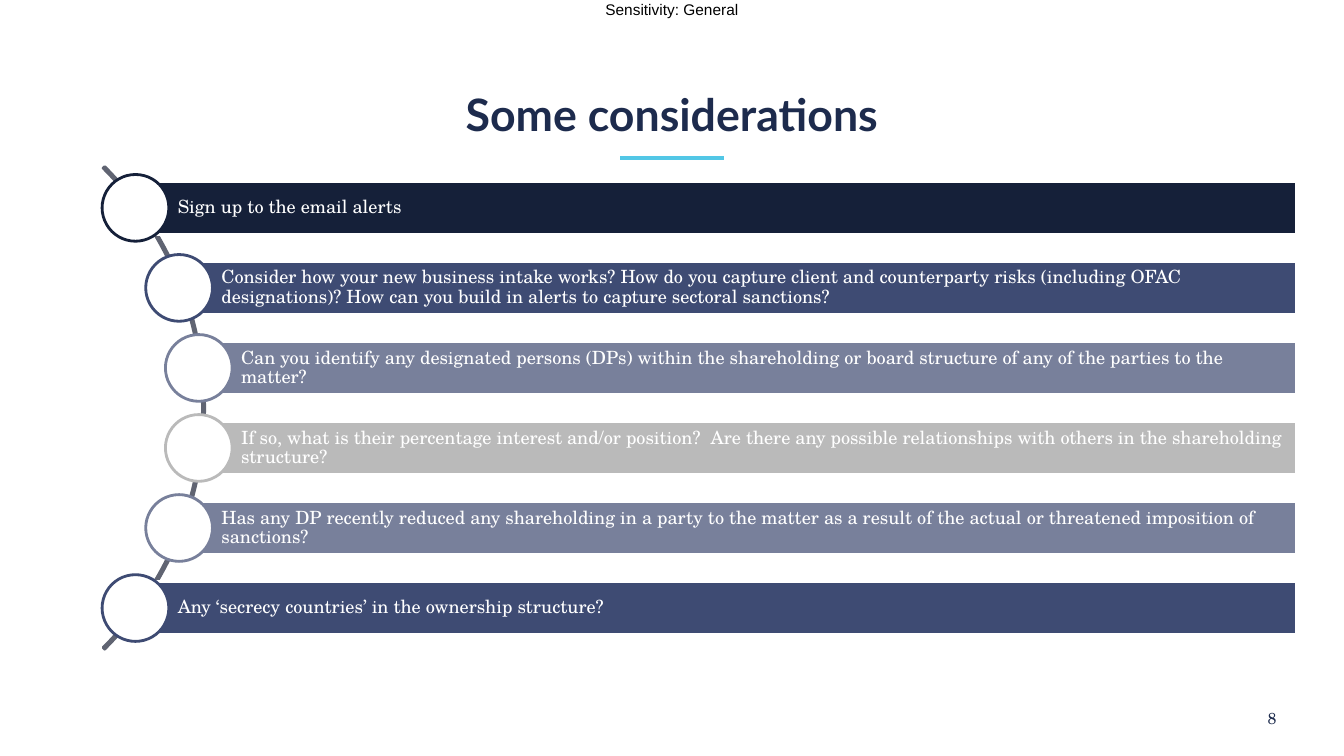
import math
from dataclasses import dataclass

from lxml import etree
from pptx import Presentation
from pptx.dml.color import RGBColor
from pptx.enum.shapes import MSO_CONNECTOR, MSO_SHAPE
from pptx.enum.text import MSO_ANCHOR, PP_ALIGN
from pptx.oxml.ns import qn
from pptx.util import Inches, Pt

LEFT, CENTER, RIGHT = PP_ALIGN.LEFT, PP_ALIGN.CENTER, PP_ALIGN.RIGHT
TOP, MIDDLE, BOTTOM = MSO_ANCHOR.TOP, MSO_ANCHOR.MIDDLE, MSO_ANCHOR.BOTTOM
BAR, CIRCLE, ARC = MSO_SHAPE.RECTANGLE, MSO_SHAPE.OVAL, MSO_SHAPE.BLOCK_ARC
STRAIGHT = MSO_CONNECTOR.STRAIGHT
SLIDE_W, SLIDE_H = 13.33, 7.5


@dataclass(frozen=True)
class Theme:
    navy: str = "1D2B4D"
    midnight: str = "152039"
    indigo: str = "3E4B73"
    slate: str = "78809B"
    silver: str = "BABABA"
    graphite: str = "606472"
    accent: str = "52C7E6"
    white: str = "FFFFFF"
    black: str = "000000"
    heading_font: str = "Lato"
    body_font: str = "TeX Gyre Schola"
    label_font: str = "Arial"
    title_size: float = 31.9
    body_size: float = 13
    number_size: float = 11.4
    label_size: float = 11
    line_width: float = 2
    rule_width: float = 2.5


THEME = Theme()

CONSIDERATIONS = [
    ("Sign up to the email alerts", THEME.midnight),
    ("Consider how your new business intake works? How do you capture client "
     "and counterparty risks (including OFAC designations)? How can you build "
     "in alerts to capture sectoral sanctions?", THEME.indigo),
    ("Can you identify any designated persons (DPs) within the shareholding or "
     "board structure of any of the parties to the matter?", THEME.slate),
    ("If so, what is their percentage interest and/or position?  Are there any "
     "possible relationships with others in the shareholding structure?",
     THEME.silver),
    ("Has any DP recently reduced any shareholding in a party to the matter as "
     "a result of the actual or threatened imposition of sanctions?",
     THEME.slate),
    ("Any ‘secrecy countries’ in the ownership structure?", THEME.indigo),
]


def rgb(value):
    return RGBColor.from_string(value)


def write(holder, text, *, size, color, font=THEME.body_font, bold=False,
          align=LEFT, anchor=MIDDLE, insets=(0, 0, 0, 0), spacing=1.0, wrap=True):
    frame = holder.text_frame
    frame.word_wrap = wrap
    frame.vertical_anchor = anchor
    (frame.margin_left, frame.margin_top,
     frame.margin_right, frame.margin_bottom) = map(Inches, insets)
    paragraph = frame.paragraphs[0]
    paragraph.alignment = align
    paragraph.line_spacing = spacing
    run = paragraph.add_run()
    run.text = text
    run.font.name = font
    run.font.size = Pt(size)
    run.font.bold = bold
    run.font.color.rgb = rgb(color)


def add_outlined(slide, kind, box, line, fill=None):
    shape = slide.shapes.add_shape(kind, *map(Inches, box))
    shape.shadow.inherit = False
    if fill:
        shape.fill.solid()
        shape.fill.fore_color.rgb = rgb(fill)
    else:
        shape.fill.background()
    shape.line.color.rgb = rgb(line)
    shape.line.width = Pt(THEME.line_width)
    return shape


def add_label(slide, box, text, **style):
    write(slide.shapes.add_textbox(*map(Inches, box)), text, **style)


def build_heading(slide, box, text):
    left, top, width, height = box
    title = slide.shapes.title
    title.left, title.top, title.width, title.height = map(Inches, box)
    write(title, text, size=THEME.title_size, color=THEME.navy, bold=True,
          font=THEME.heading_font, align=CENTER, anchor=BOTTOM)

    # Short rule centred under the title
    middle, rule_y, half = left + width / 2, top + height + 0.18, 0.515
    rule = slide.shapes.add_connector(
        STRAIGHT, *map(Inches, (middle - half, rule_y, middle + half, rule_y)))
    rule.line.color.rgb = rgb(THEME.accent)
    rule.line.width = Pt(THEME.rule_width)
    etree.SubElement(rule._element.spPr, qn("a:effectLst"))


def build_curved_list(slide, box, items):
    left, top, width, height = box
    pitch = height / len(items)
    bar_height, circle_size = pitch * 2 / 3, pitch * 5 / 6
    middle = top + height / 2

    # Arc that the circles follow
    diameter = 6.77
    arc_left = left - 5.75
    arc_center = arc_left + diameter / 2
    arc = add_outlined(slide, ARC, (arc_left, middle - diameter / 2,
                                    diameter, diameter), THEME.graphite)
    for index, value in enumerate((189, 27, 0.0032)):
        arc.adjustments[index] = value
    track_radius = 3.35

    # One bar and one circle per consideration
    for row, (text, color) in enumerate(items):
        y = top + pitch * (row + 0.5)
        x = arc_center + math.sqrt(track_radius ** 2 - (y - middle) ** 2)
        bar = add_outlined(slide, BAR, (x, y - bar_height / 2,
                                        left + width - x, bar_height),
                           THEME.white, color)
        write(bar, text, size=THEME.body_size, color=THEME.white,
              insets=(0.42, 0.04, 0.04, 0.04), spacing=0.9)
        add_outlined(slide, CIRCLE, (x - circle_size / 2, y - circle_size / 2,
                                     circle_size, circle_size),
                     color, THEME.white)


def main():
    deck = Presentation()
    deck.slide_width, deck.slide_height = Inches(SLIDE_W), Inches(SLIDE_H)
    slide = deck.slides.add_slide(deck.slide_layouts[5])

    # Sensitivity marking at the top edge
    add_label(slide, (SLIDE_W / 2 - 0.68, 0, 1.36, 0.18), "Sensitivity: General",
              size=THEME.label_size, color=THEME.black, font=THEME.label_font,
              align=CENTER, anchor=TOP, wrap=False)
    build_heading(slide, (2.02, 0.4, 9.29, 0.99), "Some considerations")
    build_curved_list(slide, (1.01, 1.665, 11.85, 4.764), CONSIDERATIONS)
    # Page number
    add_label(slide, (11.76, 7.01, 0.9, 0.22), "8", size=THEME.number_size,
              color=THEME.navy, align=RIGHT)
    deck.save("out.pptx")


if __name__ == "__main__":
    main()
